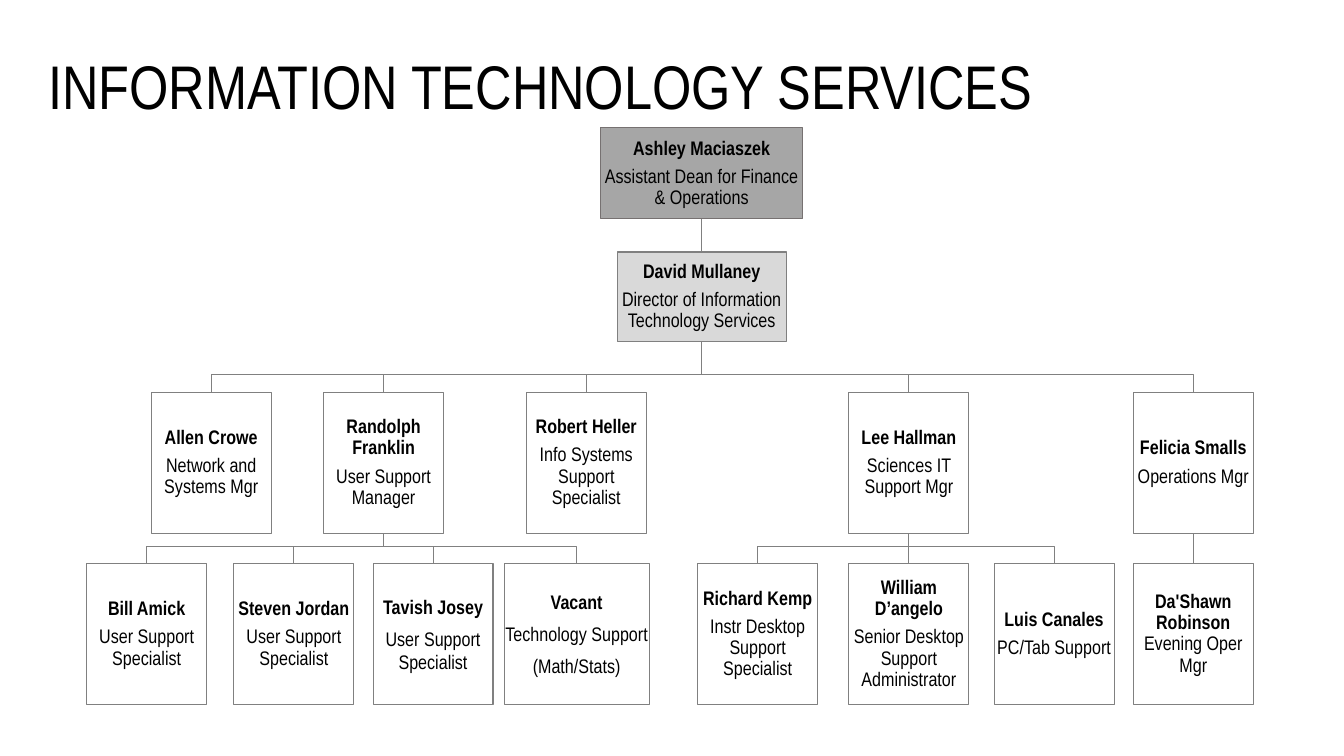
"""Build the organisation chart of Information Technology Services."""
from dataclasses import dataclass

from lxml.etree import SubElement
from pptx import Presentation
from pptx.dml.color import RGBColor
from pptx.dml.line import LineFormat
from pptx.enum.shapes import MSO_CONNECTOR, MSO_SHAPE
from pptx.enum.text import MSO_ANCHOR, PP_ALIGN
from pptx.oxml.ns import qn
from pptx.shapes.autoshape import Shape
from pptx.slide import Slide
from pptx.util import Inches, Pt

FONT = "Arial Narrow"
BLACK = "000000"
GRAY = "808080"
RAIL_GAP = 0.17
STAFF_HEIGHT = 1.4
MANAGER_TOP = 3.89
STAFF_TOP = 5.59
BOTTOM_SITE, TOP_SITE = 2, 0


@dataclass(frozen=True)
class Post:
    name: str
    roles: tuple[str, ...]
    left: float
    top: float
    boss: str = ""
    width: float = 1.19
    height: float = STAFF_HEIGHT
    fill: str = "FFFFFF"
    outline: str = GRAY
    line_spacing: float = 0.9
    space_after: float = 4.9
    same_paragraph: bool = False

    @property
    def center(self) -> float:
        return self.left + self.width / 2

    @property
    def bottom(self) -> float:
        return self.top + self.height


DEAN = "Ashley Maciaszek"
DIRECTOR = "David Mullaney"
USER_SUPPORT = "Randolph Franklin"
SCIENCES = "Lee Hallman"
OPERATIONS = "Felicia Smalls"

POSTS = [
    Post(DEAN, ("Assistant Dean for Finance & Operations",), 5.96, 1.27,
         width=2, height=0.9, fill="A6A6A6", outline="767171"),
    Post(DIRECTOR, ("Director of Information Technology Services",), 6.12, 2.5, DEAN,
         width=1.68, height=0.89, fill="D9D9D9"),
    Post("Allen Crowe", ("Network and Systems Mgr",), 1.5, MANAGER_TOP, DIRECTOR),
    Post(USER_SUPPORT, ("User Support Manager",), 3.21, MANAGER_TOP, DIRECTOR),
    Post("Robert Heller", ("Info Systems Support Specialist",), 5.22, MANAGER_TOP, DIRECTOR),
    Post(SCIENCES, ("Sciences IT Support Mgr",), 8.42, MANAGER_TOP, DIRECTOR),
    Post(OPERATIONS, ("Operations Mgr",), 11.24, MANAGER_TOP, DIRECTOR),
    Post("Bill Amick", ("User Support Specialist",), 0.86, STAFF_TOP, USER_SUPPORT),
    Post("Steven Jordan", ("User Support Specialist",), 2.32, STAFF_TOP, USER_SUPPORT),
    Post("Tavish Josey", ("User Support Specialist",), 3.7, STAFF_TOP, USER_SUPPORT,
         line_spacing=1.0, space_after=6),
    Post("Vacant", ("Technology Support", "(Math/Stats)"), 5, STAFF_TOP, USER_SUPPORT,
         width=1.44, line_spacing=1.0, space_after=6),
    Post("Richard Kemp", ("Instr Desktop Support Specialist",), 6.92, STAFF_TOP, SCIENCES),
    Post("William D’angelo", ("Senior Desktop Support Administrator",), 8.42, STAFF_TOP, SCIENCES),
    Post("Luis Canales", ("PC/Tab Support",), 9.86, STAFF_TOP, SCIENCES),
    Post("Da'Shawn Robinson", ("Evening Oper Mgr",), 11.24, STAFF_TOP, OPERATIONS,
         same_paragraph=True),
]


def color(value: str) -> RGBColor:
    return RGBColor.from_string(value)


def set_line(line: LineFormat, value: str) -> None:
    line.color.rgb = color(value)
    line.width = Pt(0.75)


def add_span(para, text: str, size: float, bold: bool = False) -> None:
    span = para.add_run()
    span.text = text
    span.font.name = FONT
    span.font.size = Pt(size)
    span.font.bold = bold
    span.font.color.rgb = color(BLACK)


def add_title(page: Slide, text: str) -> None:
    box = page.shapes.add_textbox(Inches(0.38), Inches(0.16), Inches(11.5), Inches(1.45))
    frame = box.text_frame
    frame.word_wrap = True
    frame.vertical_anchor = MSO_ANCHOR.MIDDLE
    para = frame.paragraphs[0]
    para.line_spacing = 0.9
    add_span(para, text, 44)


def add_post(page: Slide, post: Post) -> Shape:
    box = page.shapes.add_shape(MSO_SHAPE.RECTANGLE, Inches(post.left), Inches(post.top),
                                Inches(post.width), Inches(post.height))
    box.shadow.inherit = False
    box.fill.solid()
    box.fill.fore_color.rgb = color(post.fill)
    set_line(box.line, post.outline)
    frame = box.text_frame
    frame.word_wrap = True
    frame.vertical_anchor = MSO_ANCHOR.MIDDLE
    frame.margin_left = frame.margin_right = Inches(0.01)
    frame.margin_top = frame.margin_bottom = Inches(0.01)
    para = frame.paragraphs[0]
    add_span(para, post.name, 14, bold=True)
    for role in post.roles:
        if post.same_paragraph:
            para.add_line_break()
        else:
            para = frame.add_paragraph()
        add_span(para, role, 14)
    for para in frame.paragraphs:
        para.alignment = PP_ALIGN.CENTER
        para.line_spacing = post.line_spacing
        para.space_after = Pt(post.space_after)
    return box


def add_straight_link(page: Slide, boss_box: Shape, box: Shape) -> None:
    link = page.shapes.add_connector(MSO_CONNECTOR.STRAIGHT, 0, 0, 0, 0)
    link.begin_connect(boss_box, BOTTOM_SITE)
    link.end_connect(box, TOP_SITE)
    set_line(link.line, GRAY)
    SubElement(link._element.spPr, qn("a:effectLst"))


def add_bent_link(page: Slide, boss: Post, post: Post) -> None:
    rail = Inches(post.top - RAIL_GAP)
    start, end = Inches(boss.center), Inches(post.center)
    builder = page.shapes.build_freeform(start, Inches(boss.bottom))
    builder.add_line_segments([(start, rail), (end, rail), (end, Inches(post.top))], close=False)
    link = builder.convert_to_shape()
    link.shadow.inherit = False
    link.fill.background()
    set_line(link.line, GRAY)


def main() -> None:
    deck = Presentation()
    deck.slide_width, deck.slide_height = Inches(13.33), Inches(7.5)
    page = deck.slides.add_slide(deck.slide_layouts[6])
    add_title(page, "INFORMATION TECHNOLOGY SERVICES")
    boxes = {post.name: add_post(page, post) for post in POSTS}
    posts = {post.name: post for post in POSTS}
    for post in POSTS:
        if not post.boss:
            continue
        boss = posts[post.boss]
        if abs(boss.center - post.center) < 0.01:
            add_straight_link(page, boxes[boss.name], boxes[post.name])
        else:
            add_bent_link(page, boss, post)
    deck.save("out.pptx")


if __name__ == "__main__":
    main()
